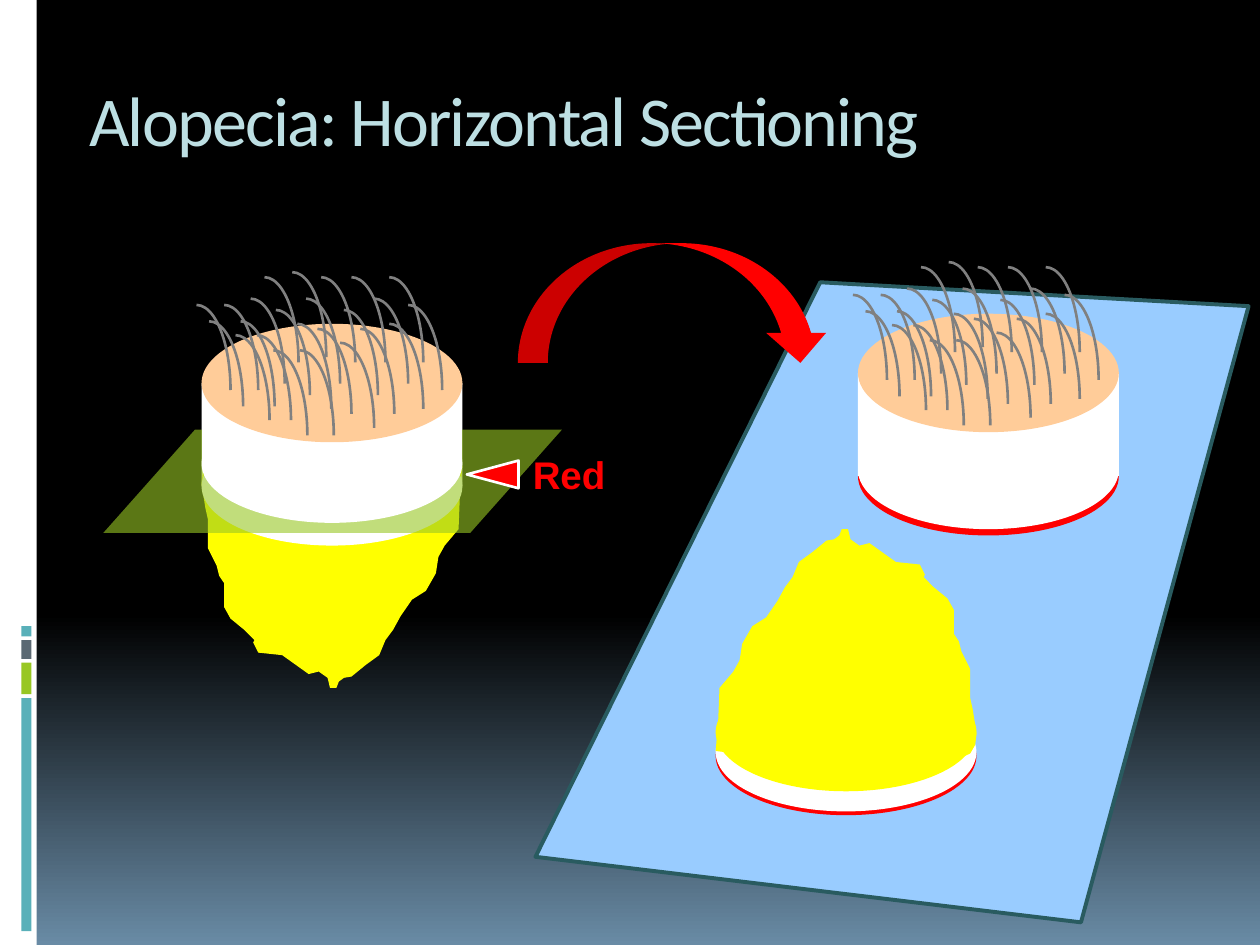
from lxml import etree
from pptx import Presentation
from pptx.dml.color import RGBColor
from pptx.enum import shapes, text
from pptx.oxml.ns import qn
from pptx.util import Inches, Pt

BLACK = RGBColor(0x00, 0x00, 0x00)
STEEL = RGBColor(0x69, 0x8B, 0xA5)
WHITE = RGBColor(0xFF, 0xFF, 0xFF)
TEAL = RGBColor(0x59, 0xB0, 0xB9)
GREEN = RGBColor(0x98, 0xC7, 0x23)
SLATE = RGBColor(0x5B, 0x69, 0x73)
PALE = RGBColor(0xBD, 0xDF, 0xE3)
PAPER = RGBColor(0x99, 0xCC, 0xFF)
EDGE = RGBColor(0x29, 0x5B, 0x60)
RED = RGBColor(0xFF, 0x00, 0x00)
SKIN = RGBColor(0xFF, 0xCC, 0x99)
GRAY = RGBColor(0x80, 0x80, 0x80)
YELLOW = RGBColor(0xFF, 0xFF, 0x00)

MSO = shapes.MSO_SHAPE


def inches(*values):
    return [Inches(v) for v in values]


def paint(sp, fill=None, line=None, weight=1.5):
    sp.shadow.inherit = False
    if fill is None:
        sp.fill.background()
    else:
        sp.fill.solid()
        sp.fill.fore_color.rgb = fill
    if line is None:
        sp.line.fill.background()
    else:
        sp.line.color.rgb = line
        sp.line.width = Pt(weight)


prs = Presentation()
prs.slide_width, prs.slide_height = inches(10, 7.5)
s = prs.slides.add_slide(prs.slide_layouts[6])

bg = s.background.fill
bg.gradient()
bg.gradient_angle = 270
for stop, position, color in zip(bg.gradient_stops, (0.65, 1), (BLACK, STEEL)):
    stop.position = position
    stop.color.rgb = color

paint(s.shapes.add_shape(MSO.RECTANGLE, *inches(0, 0, 0.29, 7.5)), WHITE)
bar_top = 4.97
bar_gap = 0.03
for height, color in [(0.08, TEAL), (0.15, SLATE), (0.25, GREEN), (1.85, TEAL)]:
    paint(s.shapes.add_shape(MSO.RECTANGLE, *inches(0.17, bar_top, 0.08, height)), color)
    bar_top += height + bar_gap

fb = s.shapes.build_freeform(*inches(4.25, 6.8))
fb.add_line_segments([inches(6.51, 2.24), inches(9.91, 2.43), inches(8.58, 7.32)])
paint(fb.convert_to_shape(), PAPER, EDGE, 2.25)

tf = s.shapes.add_textbox(*inches(0.61, 0.56, 8.89, 1)).text_frame
tf.word_wrap = True
tf.vertical_anchor = text.MSO_ANCHOR.TOP
p = tf.paragraphs[0]
r = p.add_run()
r.text = "Alopecia: Horizontal Sectioning"
r._r.get_or_add_rPr().set("spc", "-100")
p.font.name, p.font.size = "Calibri", Pt(40)
p.font.color.rgb = PALE

PARTS = {
    "scalp": (MSO.OVAL, 2.07, 0.94),
    "disc": (MSO.OVAL, 2.07, 0.94),
    "bowl": (MSO.OVAL, 2.07, 0.82),
    "wall": (MSO.RECTANGLE, 2.07, 0.82),
    "seam": (MSO.FLOWCHART_PROCESS, 2.07, 0.29),
    "plane": (MSO.FLOWCHART_DATA, 3.64, 0.82),
}
PLANE_OVERHANG = 0.78

# Hair rows and fat edges are measured from the left and top of their own part.
HAIR_ROWS = {
    -0.41: [0.45],
    -0.37: [0.23, 0.68, 0.92, 1.22],
    -0.2: [0.12, 0.56, 1.1],
    -0.15: [-0.31, -0.09, 1.37],
    -0.11: [0.32, 0.86],
    -0.02: [-0.21, 0.04],
    0: [0.49, 1.22],
    0.04: [0.65, 0.99],
    0.09: [0, 0.17],
    0.15: [0.83],
    0.21: [0.3, 0.51],
}
FAT_LEFT_EDGE = [
    (0.01, 0.16), (0, 0.25), (0.03, 0.44), (0.05, 0.53), (0.05, 0.76), (0.12, 0.9),
    (0.14, 0.98), (0.18, 1.04), (0.18, 1.23), (0.23, 1.32), (0.34, 1.41), (0.42, 1.49),
    (0.41, 1.51), (0.45, 1.59), (0.64, 1.61),
]
FAT_TIP = [
    (0.78, 1.71), (0.85, 1.76), (0.93, 1.74), (1, 1.79), (1.02, 1.87), (1.07, 1.87),
    (1.09, 1.82), (1.13, 1.79), (1.19, 1.78),
]
FAT_RIGHT_EDGE = [
    (1.3, 1.69), (1.41, 1.61), (1.46, 1.49), (1.52, 1.41), (1.58, 1.3), (1.67, 1.17),
    (1.78, 1.1), (1.86, 0.96), (1.88, 0.83), (1.93, 0.74), (2.04, 0.61), (2.05, 0.35),
    (2.07, 0.11),
]
FAT_TOP_EDGE = [(1.83, 0.08), (1.37, 0.04), (0.63, 0.04), (0.25, 0), (0.05, 0.09)]
FAT_OUTLINE = FAT_LEFT_EDGE + FAT_TIP + FAT_RIGHT_EDGE + FAT_TOP_EDGE

cut_top = [
    ("disc", 3.31, RED), ("wall", 2.96, WHITE), ("disc", 3.26, WHITE),
    ("bowl", 3.13, WHITE), ("seam", 3.31, WHITE), ("scalp", 2.49, SKIN),
]
cut_base = [("disc", 5.53, RED), ("disc", 5.5, WHITE), ("fat", 4.2, YELLOW), ("disc", 5.34, YELLOW)]
whole_punch = [
    ("wall", 3.04, WHITE), ("fat", 3.59, YELLOW), ("disc", 3.39, WHITE), ("plane", 3.41, GREEN),
    ("disc", 3.21, WHITE), ("seam", 3.39, WHITE), ("scalp", 2.57, SKIN),
]
for left, fat_rotation, layers in [(6.81, 0, cut_top), (5.68, 180, cut_base), (1.6, 0, whole_punch)]:
    grp = s.shapes.add_group_shape().shapes
    for part, top, color in layers:
        if part == "fat":
            points = [inches(left + x, top + y) for x, y in FAT_OUTLINE]
            fb = grp.build_freeform(*points[0])
            fb.add_line_segments(points[1:])
            sp = fb.convert_to_shape()
            sp.rotation = fat_rotation
        else:
            kind, width, height = PARTS[part]
            x = left - PLANE_OVERHANG if part == "plane" else left
            sp = grp.add_shape(kind, *inches(x, top, width, height))
        paint(sp, color)
        if part == "plane":
            clr = sp.fill._xPr.find(qn("a:solidFill"))[0]
            etree.SubElement(clr, qn("a:alpha"), val="60000")
        if part == "scalp":
            for dy, row in HAIR_ROWS.items():
                for dx in row:
                    paint(grp.add_shape(MSO.ARC, *inches(left + dx, top + dy, 0.54, 1.35)), line=GRAY)

sp = s.shapes.add_shape(MSO.ISOSCELES_TRIANGLE, *inches(3.8, 3.56, 0.22, 0.41))
sp.rotation = 270
paint(sp, RED, WHITE)

tf = s.shapes.add_textbox(*inches(4.13, 3.53, 0.79, 0.47)).text_frame
tf.word_wrap = False
tf.auto_size = text.MSO_AUTO_SIZE.SHAPE_TO_FIT_TEXT
p = tf.paragraphs[0]
p.text = "Red"
p.font.name, p.font.size, p.font.bold = "Arial", Pt(22), True
p.font.color.rgb = RED

paint(s.shapes.add_shape(MSO.CURVED_DOWN_ARROW, *inches(4.11, 1.93, 2.48, 0.95)), RED)

prs.save("out.pptx")
